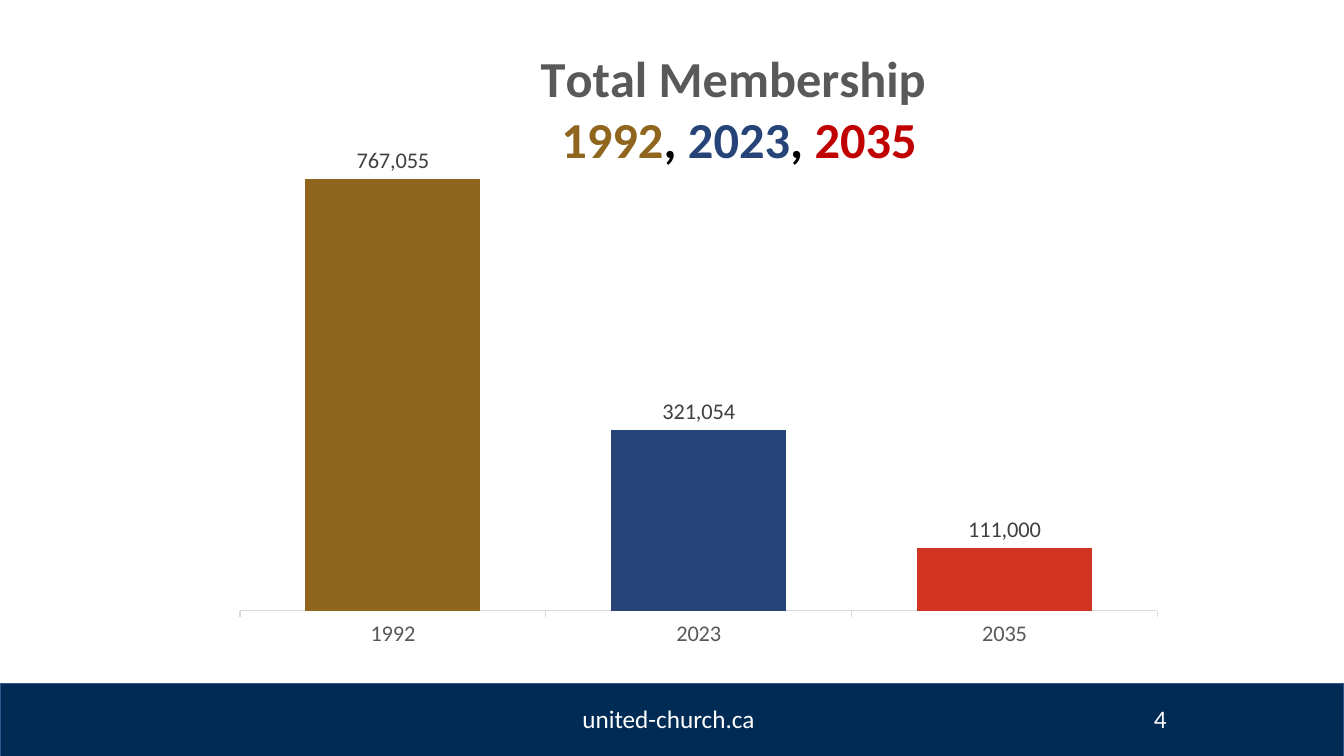
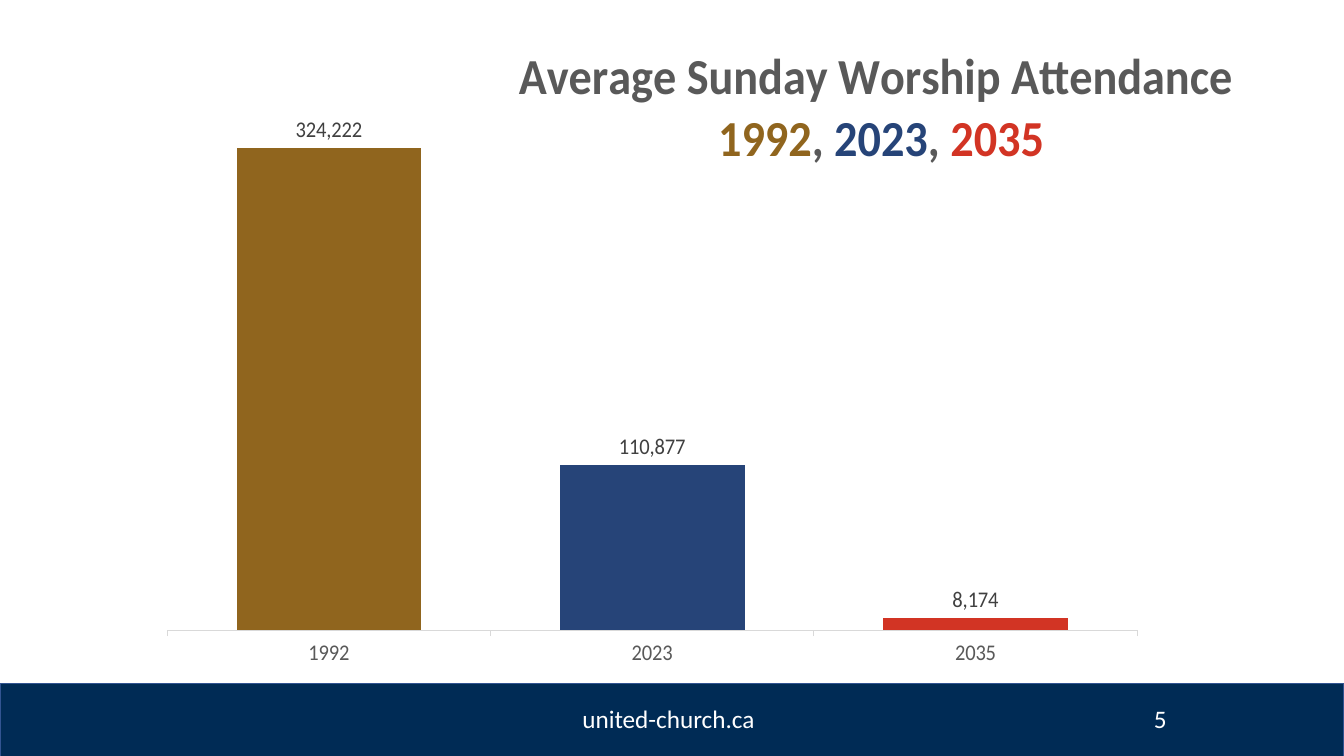
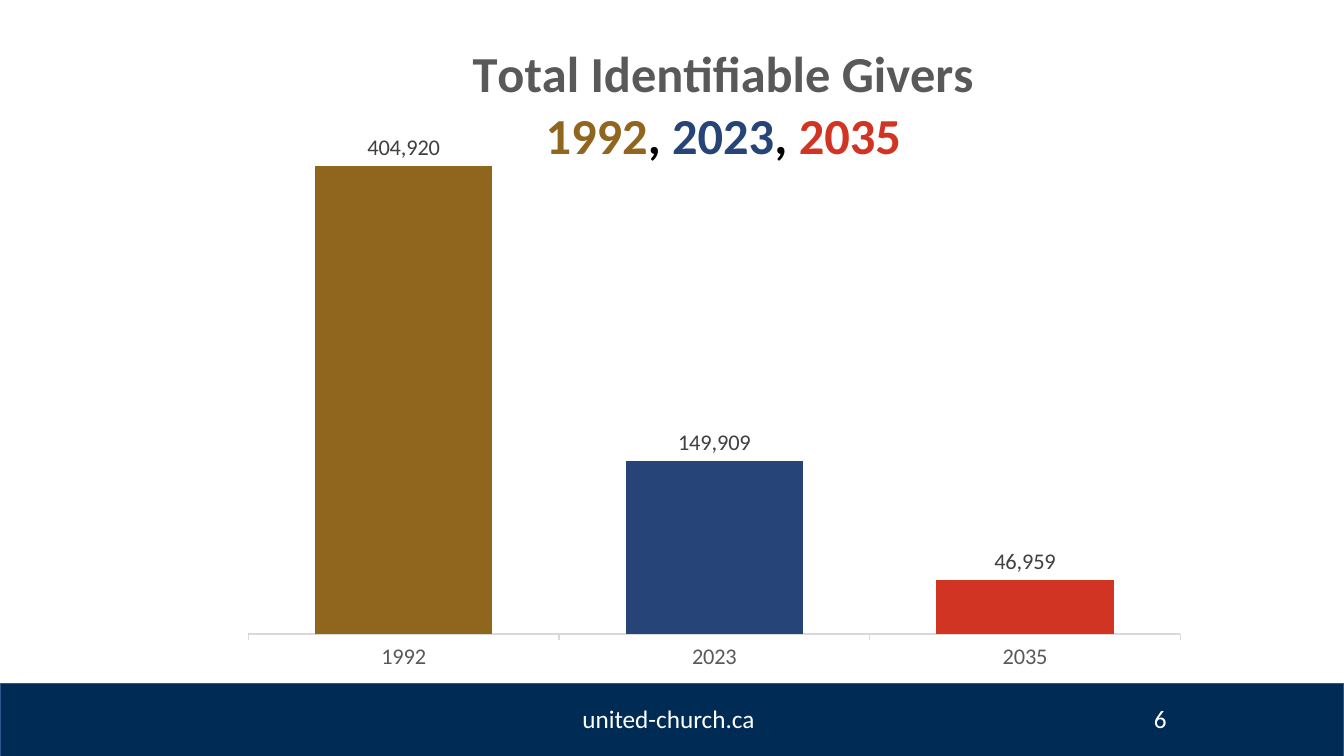
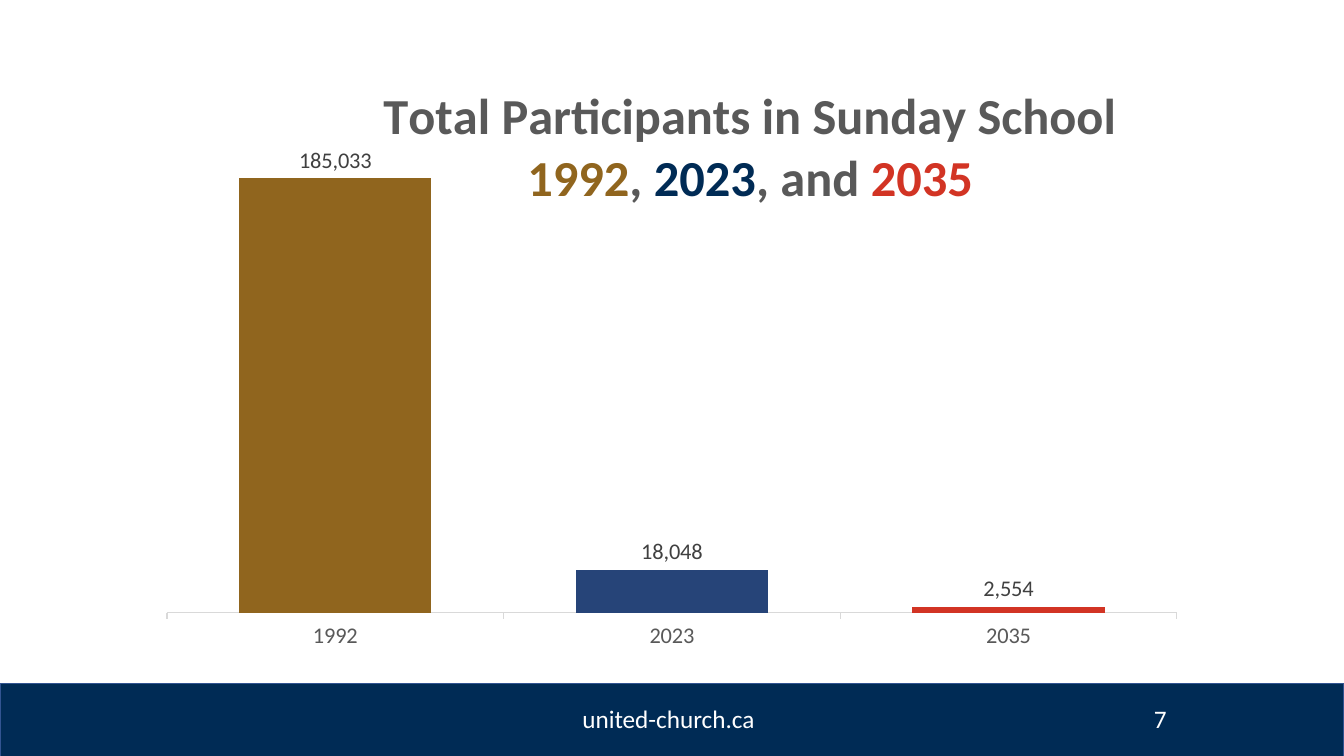
from lxml import etree
from pptx import Presentation
from pptx.chart.data import CategoryChartData
from pptx.dml.color import RGBColor
from pptx.enum.chart import XL_CHART_TYPE, XL_LABEL_POSITION, XL_TICK_LABEL_POSITION, XL_TICK_MARK
from pptx.enum.shapes import MSO_SHAPE
from pptx.enum.text import PP_ALIGN
from pptx.oxml.ns import qn
from pptx.util import Inches, Pt

FONT = "Calibri"
NAVY, WHITE, BLACK, GREY = "002B55", "FFFFFF", "000000", "595959"
GOLD, BLUE, RED, DARK_RED = "90651E", "264478", "D23424", "C00000"
YEARS = ("1992", "2023", "2035")
BAR_COLORS = (GOLD, BLUE, RED)
FIRST_PAGE = 4

# box: left, top, width, height in inches; title_at and plot_top: shares of the box
SLIDES = [
    dict(box=(2.22, 0.37, 9.43, 6.35), title_at=(0.33, 0.01), plot_top=0.104,
         values=(767055, 321054, 111000), top_value=900000,
         title=[[("Total Membership ", GREY)],
                [("1992", GOLD), (", ", BLACK), ("2023", BLUE), (", ", BLACK), ("2035", DARK_RED)]]),
    dict(box=(1.49, 0.41, 10.87, 6.52), title_at=(0.364, 0), plot_top=0.104,
         values=(324222, 110877, 8174), top_value=350000,
         title=[[("Average Sunday Worship Attendance ", GREY)],
                [("1992", GOLD), (", ", GREY), ("2023", BLUE), (", ", GREY), ("2035", RED)]]),
    dict(box=(2.3, 0.39, 9.58, 6.52), title_at=(0.246, 0), plot_top=0.113,
         values=(404920, 149909, 46959), top_value=450000,
         title=[[("Total Identifiable Givers", GREY)],
                [("1992", GOLD), (", ", BLACK), ("2023", BLUE), (", ", BLACK), ("2035", RED)]]),
    dict(box=(1.48, 0.81, 10.38, 5.88), title_at=(0.221, 0), plot_top=0.104,
         values=(185033, 18048, 2554), top_value=200000,
         title=[[("Total Participants in Sunday School", GREY)],
                [("1992", GOLD), (", ", GREY), ("2023", NAVY), (", and ", GREY), ("2035", RED)]]),
]


def rgb(color):
    return RGBColor.from_string(color)


def style_font(font, size, color, bold=False):
    for name, value in dict(name=FONT, size=Pt(size), bold=bold).items():
        setattr(font, name, value)
    font.color.rgb = rgb(color)


def set_layout(layout, **shares):
    """Fix a chart part at shares of the chart's box."""
    for child in list(layout):
        layout.remove(child)
    manual = etree.SubElement(layout, qn("c:manualLayout"))
    if "w" in shares:
        etree.SubElement(manual, qn("c:layoutTarget")).set("val", "inner")
    for side in ("xMode", "yMode"):
        etree.SubElement(manual, qn("c:" + side)).set("val", "edge")
    for side, share in shares.items():
        etree.SubElement(manual, qn("c:" + side)).set("val", str(share))


def layout_of(parent, place):
    layout = parent.find(qn("c:layout"))
    if layout is None:
        layout = etree.Element(qn("c:layout"))
        parent.insert(place, layout)
    return layout


def add_footer(slide, page, left, top, width, height):
    # Band
    band = slide.shapes.add_shape(MSO_SHAPE.RECTANGLE, *map(Inches, (left, top, width, height)))
    band.shadow.inherit = False
    band.fill.solid()
    band.fill.fore_color.rgb = rgb(NAVY)
    band.line.color.rgb = rgb("325491")
    band.line.width = Pt(1)
    # Web address and page number
    for text, x, w, align in (("united-church.ca", 4.42, 4.42, PP_ALIGN.CENTER),
                              (str(page), 9.42, 2.25, PP_ALIGN.RIGHT)):
        label = slide.shapes.add_textbox(*map(Inches, (left + x, top + 0.15, w, 0.4)))
        label.text_frame.word_wrap = True
        line = label.text_frame.paragraphs[0]
        line.text = text
        line.alignment = align
        style_font(line.runs[0].font, 18, WHITE)


def add_title(chart, lines, at):
    frame = chart.chart_title.text_frame
    for number, pieces in enumerate(lines):
        line = frame.add_paragraph() if number else frame.paragraphs[0]
        line.alignment = PP_ALIGN.CENTER
        for text, color in pieces:
            run = line.add_run()
            run.text = text
            style_font(run.font, 36, color, bold=True)
    set_layout(layout_of(chart.chart_title._element, 1), x=at[0], y=at[1])


def add_year_chart(slide, box, values, top_value, title, title_at, plot_top):
    data = CategoryChartData(number_format="#,##0")
    data.categories = YEARS
    data.add_series("Series 1", values)
    chart = slide.shapes.add_chart(XL_CHART_TYPE.COLUMN_CLUSTERED, *map(Inches, box), data).chart
    style_font(chart.font, 10, BLACK)
    chart.has_legend = False
    add_title(chart, title, title_at)

    # Axes
    scale, years = chart.value_axis, chart.category_axis
    for name, value in dict(visible=False, has_major_gridlines=False,
                            minimum_scale=0, maximum_scale=top_value).items():
        setattr(scale, name, value)
    years.major_tick_mark = XL_TICK_MARK.OUTSIDE
    years.tick_label_position = XL_TICK_LABEL_POSITION.LOW
    years.format.line.color.rgb = rgb("D9D9D9")
    years.format.line.width = Pt(0.75)
    style_font(years.tick_labels.font, 16, GREY)

    # Bars and their values
    plot = chart.plots[0]
    for name, value in dict(gap_width=75, overlap=-25, vary_by_categories=False,
                            has_data_labels=True).items():
        setattr(plot, name, value)
    for number, color in enumerate(BAR_COLORS):
        fill = plot.series[0].points[number].format.fill
        fill.solid()
        fill.fore_color.rgb = rgb(color)
    labels = plot.data_labels
    for name, value in dict(show_value=True, number_format="#,##0", number_format_is_linked=False,
                            position=XL_LABEL_POSITION.OUTSIDE_END).items():
        setattr(labels, name, value)
    style_font(labels.font, 16, "404040")
    plot_area = chart._chartSpace.find(".//" + qn("c:plotArea"))
    set_layout(layout_of(plot_area, 0), x=0.017, y=plot_top, w=0.965, h=0.792)


def main():
    prs = Presentation()
    prs.slide_width, prs.slide_height = Inches(13.33), Inches(7.5)
    for page, content in enumerate(SLIDES, FIRST_PAGE):
        slide = prs.slides.add_slide(prs.slide_layouts[6])
        add_footer(slide, page, 0, 6.78, 13.33, 0.75)
        add_year_chart(slide, **content)
    prs.save("out.pptx")


if __name__ == "__main__":
    main()
